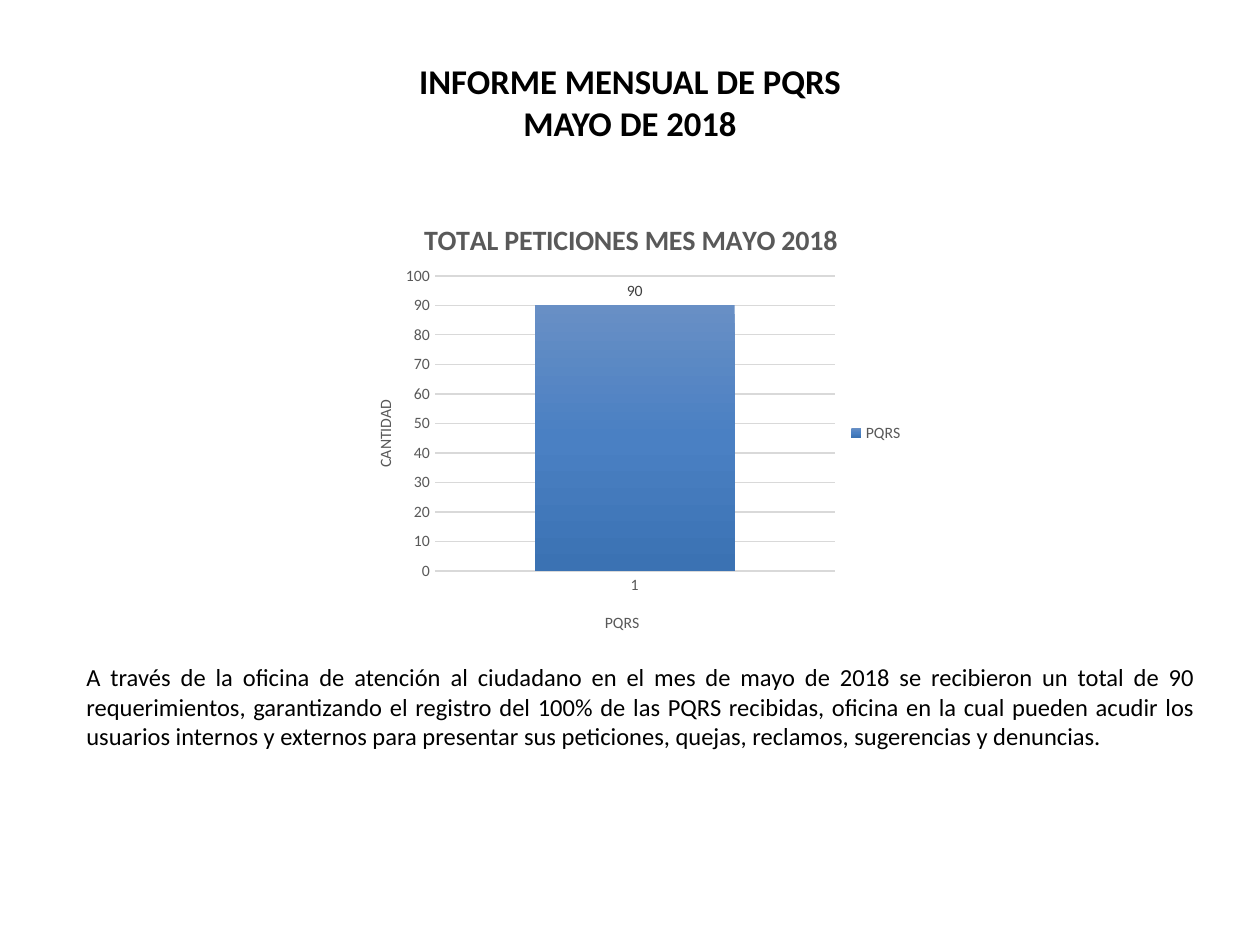
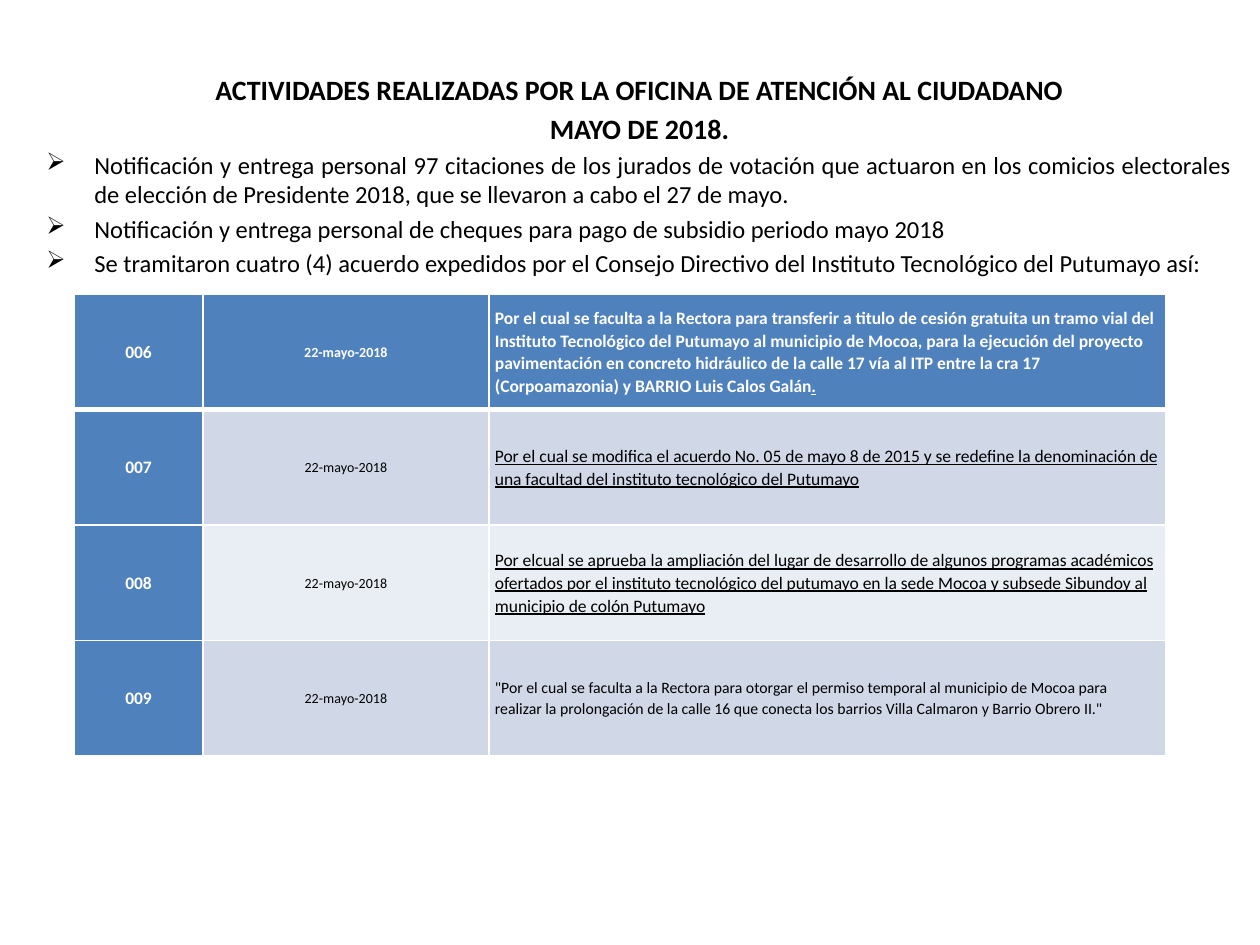
from copy import deepcopy

from lxml.etree import SubElement
from pptx import Presentation
from pptx.chart.data import CategoryChartData
from pptx.dml.color import RGBColor
from pptx.enum.chart import XL_CHART_TYPE, XL_LABEL_POSITION, XL_LEGEND_POSITION, XL_TICK_MARK
from pptx.enum.text import MSO_ANCHOR, PP_ALIGN
from pptx.oxml import parse_xml
from pptx.oxml.ns import nsdecls, qn
from pptx.util import Emu, Pt

PX = 914400 / 126
FONT = "Calibri"
BLACK = RGBColor(0x00, 0x00, 0x00)
WHITE = RGBColor(0xFF, 0xFF, 0xFF)
GRAY = RGBColor(0x59, 0x59, 0x59)
LABEL_GRAY = RGBColor(0x40, 0x40, 0x40)
GRID_GRAY = RGBColor(0xD9, 0xD9, 0xD9)
BLUE = RGBColor(0x4F, 0x81, 0xBD)
BAND_DARK = RGBColor(0xD0, 0xD8, 0xE8)
BAND_LIGHT = RGBColor(0xE9, 0xED, 0xF4)
BAR_GRADIENT = (
    (0, RGBColor(0x68, 0x8F, 0xC5)),
    (0.5, RGBColor(0x4A, 0x80, 0xC3)),
    (1, RGBColor(0x3B, 0x72, 0xB3)),
)

SUMMARY = (
    "A través de la oficina de atención al ciudadano en el mes de mayo de 2018 se recibieron "
    "un total de 90 requerimientos, garantizando el registro del 100% de las PQRS recibidas, "
    "oficina en la cual pueden acudir los usuarios internos y externos para presentar sus "
    "peticiones, quejas, reclamos, sugerencias y denuncias."
)
HEADINGS = (
    "ACTIVIDADES REALIZADAS POR LA OFICINA DE ATENCIÓN AL CIUDADANO",
    "MAYO DE 2018.",
)
ACTIVITIES = (
    "Notificación y entrega personal 97 citaciones de los jurados de votación que actuaron en "
    "los comicios electorales de elección de Presidente 2018, que se llevaron a cabo el 27 de mayo.",
    "Notificación y entrega personal de cheques para pago de subsidio periodo mayo 2018",
    "Se tramitaron cuatro (4) acuerdo expedidos por el Consejo Directivo del Instituto "
    "Tecnológico del Putumayo así:",
)
AGREEMENT_DATE = "22-mayo-2018"
AGREEMENTS = (
    ("006", "Por el cual se faculta a la Rectora para transferir a titulo de cesión gratuita un "
     "tramo vial del Instituto Tecnológico del Putumayo al municipio de Mocoa, para la ejecución "
     "del proyecto pavimentación en concreto hidráulico de la calle 17 vía al ITP entre la cra 17 "
     "(Corpoamazonia) y BARRIO Luis Calos Galán", 10, None),
    ("007", "Por el cual se modifica el acuerdo No. 05 de mayo 8 de 2015 y se redefine la "
     "denominación de una facultad del instituto tecnológico del Putumayo", 10, True),
    ("008", "Por elcual se aprueba la ampliación del lugar de desarrollo de algunos programas "
     "académicos ofertados por el instituto tecnológico del putumayo en la sede Mocoa y subsede "
     "Sibundoy al municipio de colón Putumayo", 10, True),
    ("009", "\"Por el cual se faculta a la Rectora para otorgar el permiso temporal al municipio "
     "de Mocoa para\nrealizar la prolongación de la calle 16 que conecta los barrios Villa "
     "Calmaron y Barrio Obrero II.\"", 9, None),
)


def px(length):
    """Turn px into EMU."""
    return Emu(round(length * PX))


def style(font, size, color, bold=False):
    """Set the shared typeface with a size, colour and weight."""
    font.name, font.size, font.bold = FONT, Pt(size), bold
    font.color.rgb = color


def add_text(slide, box, paragraphs, anchor=MSO_ANCHOR.TOP, spacing=0.2):
    """Add a text box from (text, size, bold, alignment, bullet) tuples."""
    frame = slide.shapes.add_textbox(*map(px, box)).text_frame
    frame.word_wrap = True
    frame.vertical_anchor = anchor
    for index, (text, size, bold, alignment, bullet) in enumerate(paragraphs):
        paragraph = frame.add_paragraph() if index else frame.paragraphs[0]
        paragraph.text = text
        paragraph.alignment = alignment
        if index:
            paragraph.space_before = Pt(size * spacing)
        if bullet:
            properties = paragraph._p.get_or_add_pPr()
            properties.set("marL", str(px(48)))
            properties.set("indent", str(-px(48)))
            SubElement(properties, qn("a:buChar"), char=bullet)
        style(paragraph.font, size, BLACK, bold)


def set_layout(element, index, chart_box, part, inner=False):
    """Fix a chart part at px offsets inside the chart box."""
    for old in element.findall(qn("c:layout")):
        element.remove(old)
    layout = parse_xml(f"<c:layout {nsdecls('c')}><c:manualLayout/></c:layout>")
    manual = layout[0]
    if inner:
        SubElement(manual, qn("c:layoutTarget"), val="inner")
    for axis in "xy":
        SubElement(manual, qn(f"c:{axis}Mode"), val="edge")
    for key, length, total in zip("xywh", part, chart_box[2:] * 2):
        SubElement(manual, qn(f"c:{key}"), val=f"{length / total:.3f}")
    element.insert(index, layout)


def add_chart_title(owner, text, size, bold, chart_box, place):
    """Title a chart or an axis at a fixed place."""
    title = owner.chart_title if hasattr(owner, "chart_title") else owner.axis_title
    title.text_frame.text = text
    style(title.text_frame.paragraphs[0].font, size, GRAY, bold)
    set_layout(title._element, 1, chart_box, place)


def add_requests_chart(slide, box):
    """Draw the column of requests received in the month."""
    data = CategoryChartData()
    data.categories = ["1"]
    data.add_series("PQRS", [90])
    chart = slide.shapes.add_chart(XL_CHART_TYPE.COLUMN_CLUSTERED, *map(px, box), data).chart
    style(chart.font, 10, BLACK)
    add_chart_title(chart, "TOTAL PETICIONES MES MAYO 2018", 16, True, box, (75, 21))
    add_chart_title(chart.category_axis, "PQRS", 9, False, box, (258, 414))
    add_chart_title(chart.value_axis, "CANTIDAD", 9, False, box, (28, 202))
    for axis in (chart.category_axis, chart.value_axis):
        axis.major_tick_mark = axis.minor_tick_mark = XL_TICK_MARK.NONE
        style(axis.tick_labels.font, 9, GRAY)
    chart.category_axis.format.line.color.rgb = GRID_GRAY
    chart.category_axis.format.line.width = Pt(1)
    counts = chart.value_axis
    counts.minimum_scale, counts.maximum_scale, counts.major_unit = 0, 100, 10
    counts.format.line.fill.background()
    counts.major_gridlines.format.line.color.rgb = GRID_GRAY
    counts.major_gridlines.format.line.width = Pt(0.75)

    chart.has_legend = True
    chart.legend.position = XL_LEGEND_POSITION.RIGHT
    chart.legend.include_in_layout = False
    style(chart.legend.font, 9, GRAY)
    set_layout(chart._chartSpace.chart.plotArea, 0, box, (91, 81, 400, 295), inner=True)

    plot = chart.plots[0]
    plot.gap_width, plot.overlap, plot.vary_by_categories = 100, -24, False
    requests = plot.series[0]
    fill = requests.format.fill
    fill.gradient()
    fill.gradient_angle = 270
    first_stop = requests._element.xpath(".//a:gs")[0]
    first_stop.addnext(deepcopy(first_stop))
    for stop, (position, color) in zip(fill.gradient_stops, BAR_GRADIENT):
        stop.position = position
        stop.color.rgb = color
    labels = requests.data_labels
    labels.show_value = True
    labels.position = XL_LABEL_POSITION.OUTSIDE_END
    style(labels.font, 9, LABEL_GRAY)


def set_borders(cell, bottom):
    """Give a cell white borders, with its own bottom width."""
    properties = cell._tc.get_or_add_tcPr()
    for side, width in (("L", 1), ("R", 1), ("T", 1), ("B", bottom)):
        line = SubElement(properties, qn(f"a:ln{side}"), w=str(Pt(width)))
        solid = SubElement(line, qn("a:solidFill"))
        SubElement(solid, qn("a:srgbClr"), val=str(WHITE))


def fill_cell(cell, text, size, fill, alignment, underline=None, bottom=1):
    """Write one table cell; text on blue is white and bold unless it is a date band."""
    cell.text = text
    cell.vertical_anchor = MSO_ANCHOR.MIDDLE
    cell.margin_left = cell.margin_right = px(6)
    cell.margin_top = cell.margin_bottom = 0
    set_borders(cell, bottom)
    cell.fill.solid()
    cell.fill.fore_color.rgb = fill
    on_blue = fill == BLUE
    for paragraph in cell.text_frame.paragraphs:
        paragraph.alignment = alignment
        paragraph.line_spacing = 1.07
        style(paragraph.font, size, WHITE if on_blue else BLACK, on_blue)
        paragraph.font.underline = underline


def add_agreements_table(slide, box):
    """Lay out the agreements: number, date and subject."""
    table = slide.shapes.add_table(len(AGREEMENTS), 3, *map(px, box)).table
    for column, width in zip(table.columns, (129, 286, box[2] - 129 - 286)):
        column.width = px(width)
    for index, (number, subject, size, underline) in enumerate(AGREEMENTS):
        table.rows[index].height = px(box[3] / len(AGREEMENTS))
        band = (BAND_DARK if index % 2 else BAND_LIGHT) if index else BLUE
        bottom = 1 if index else 3
        number_cell, date_cell, subject_cell = table.rows[index].cells
        fill_cell(number_cell, number, 10, BLUE, PP_ALIGN.CENTER, bottom=bottom)
        fill_cell(date_cell, AGREEMENT_DATE, 8, band, PP_ALIGN.CENTER, bottom=bottom)
        fill_cell(subject_cell, subject, size, band, PP_ALIGN.LEFT, underline, bottom)
    full_stop = table.cell(0, 2).text_frame.paragraphs[0].add_run()
    full_stop.text = "."
    full_stop.font.underline = True


def build_report_slide(slide):
    """Build the monthly report with its chart and summary."""
    title = [(line, 19.8, True, PP_ALIGN.CENTER, None)
             for line in ("INFORME MENSUAL DE PQRS", "MAYO DE 2018")]
    add_text(slide, (63, 38, 1134, 128), title, MSO_ANCHOR.MIDDLE, spacing=0)
    add_requests_chart(slide, (344, 195, 572, 476))
    add_text(slide, (74, 656, 1134, 110), [(SUMMARY, 14, False, PP_ALIGN.JUSTIFY, None)])


def build_activities_slide(slide):
    """Build the list of activities and the table of agreements."""
    headings = [(text, 16, True, PP_ALIGN.CENTER, None) for text in HEADINGS]
    activities = [(text, 14, False, PP_ALIGN.JUSTIFY, "➢") for text in ACTIVITIES]
    add_text(slide, (34, 66, 1211, 248), headings + activities)
    add_agreements_table(slide, (74, 294, 1092, 462))


def main():
    """Build and save the presentation."""
    presentation = Presentation()
    presentation.slide_width, presentation.slide_height = px(1260), px(945)
    for build in (build_report_slide, build_activities_slide):
        build(presentation.slides.add_slide(presentation.slide_layouts[6]))
    presentation.save("out.pptx")


if __name__ == "__main__":
    main()
